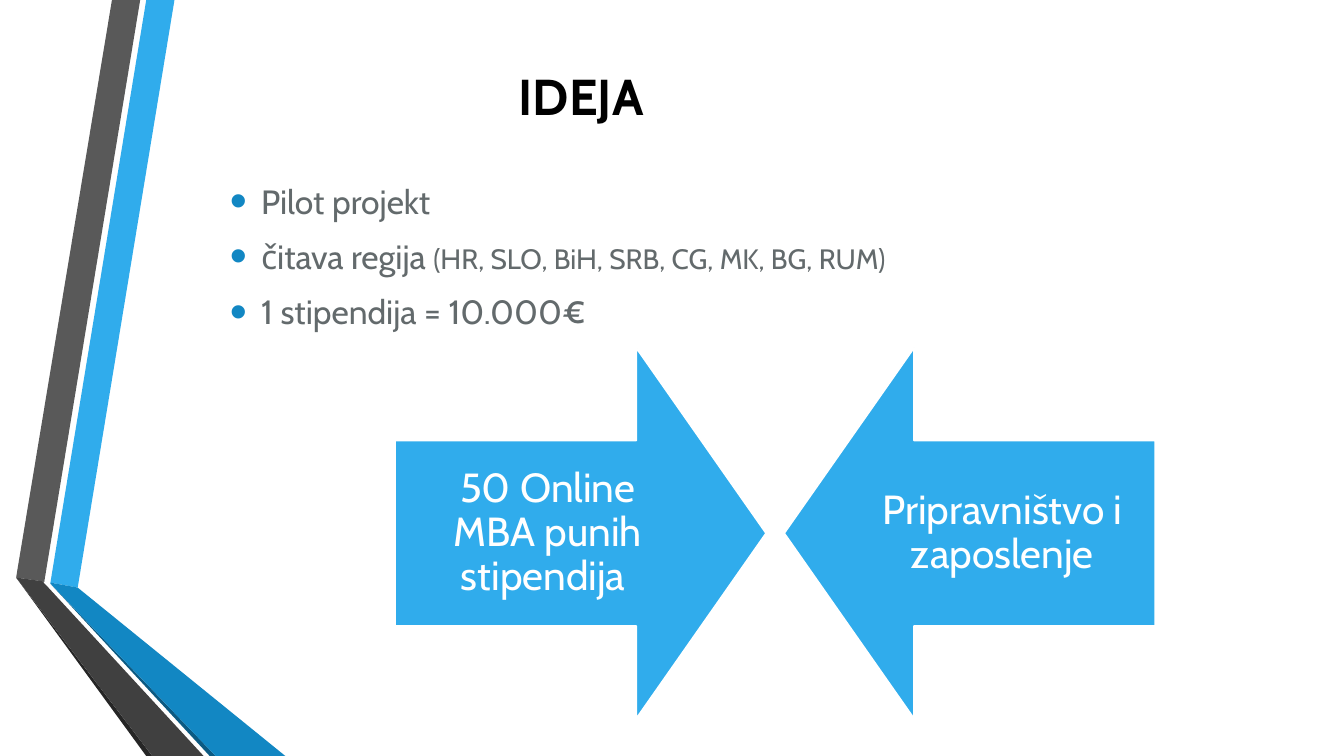
"""Builds the IDEJA slide: ribbons, a title, a list and two facing arrows."""
from dataclasses import dataclass

from lxml import etree
from pptx import Presentation
from pptx.dml.color import RGBColor
from pptx.enum.shapes import MSO_SHAPE
from pptx.enum.text import MSO_ANCHOR, MSO_AUTO_SIZE, PP_ALIGN
from pptx.oxml.ns import qn
from pptx.util import Inches, Pt

DOWN = MSO_SHAPE.DOWN_ARROW
MIDDLE = MSO_ANCHOR.MIDDLE
FIXED = MSO_AUTO_SIZE.NONE
LEFT, CENTER = PP_ALIGN.LEFT, PP_ALIGN.CENTER
WIDE, HIGH = Inches(13.33), Inches(7.5)


@dataclass(frozen=True)
class Theme:
    font: str = "Cabin"
    head: int = 36
    label: int = 29
    body: int = 24
    small: int = 20
    black: str = "000000"
    white: str = "FFFFFF"
    text: str = "636A6C"
    sky: str = "30ACEC"
    blue: str = "1287C3"
    navy: str = "0C5A82"
    gray: str = "595959"
    slate: str = "404040"
    coal: str = "262626"


THEME = Theme()

RIBBONS = (
    (THEME.sky, ((3.75, 77.07), (5.78, 77.73), (12.98, 0), (10.88, 0))),
    (THEME.gray, ((10.43, 0), (8.33, 0), (1.2, 76.4), (3.3, 76.93))),
    (THEME.coal, ((1.2, 76.4), (10.88, 100), (11.33, 100))),
    (THEME.navy, ((3.75, 77.2), (15.6, 100), (16.05, 100))),
    (THEME.blue, ((3.75, 77.2), (16.05, 100), (21.23, 100),
                  (5.78, 77.73), (3.75, 77.07))),
    (THEME.slate, ((15.15, 100), (3.6, 77.73), (3.23, 77.07),
                   (3.3, 76.93), (1.2, 76.4), (11.33, 100))),
)

ITEMS = (
    (("Pilot projekt", THEME.body),),
    (("čitava regija ", THEME.body),
     ("(HR, SLO, BiH, SRB, CG, MK, BG, RUM)", THEME.small)),
    (("1 stipendija = 10.000€", THEME.body),),
)


def across(share):
    return round(WIDE * share / 100)


def down(share):
    return round(HIGH * share / 100)


def area(left, top, width, height):
    return across(left), down(top), across(width), down(height)


def place(shape, *shares):
    shape.left, shape.top, shape.width, shape.height = area(*shares)


def tint(shape, color):
    shape.shadow.inherit = False
    shape.fill.solid()
    shape.fill.fore_color.rgb = RGBColor.from_string(color)


def bullet(para):
    props = para._p.get_or_add_pPr()
    props.set("marL", str(Inches(0.31)))
    props.set("indent", str(-Inches(0.31)))
    shade = etree.SubElement(props, qn("a:buClr"))
    etree.SubElement(shade, qn("a:srgbClr"), val=THEME.blue)
    etree.SubElement(props, qn("a:buSzPct"), val="145000")
    etree.SubElement(props, qn("a:buFont"), typeface="Arial")
    etree.SubElement(props, qn("a:buChar"), char="•")


def write(frame, lines, color, align=CENTER, bold=False, dots=False,
          space=None, after=None):
    frame.word_wrap = True
    frame.auto_size = FIXED
    frame.vertical_anchor = MIDDLE
    for index, line in enumerate(lines):
        para = frame.add_paragraph() if index else frame.paragraphs[0]
        para.alignment = align
        para.line_spacing = space
        para.space_after = after
        if dots:
            bullet(para)
        for text, size in line:
            run = para.add_run()
            run.text = text
            font = run.font
            font.name, font.size, font.bold = THEME.font, Pt(size), bold
            font.color.rgb = RGBColor.from_string(color)


def ribbon(slide, color, points):
    first, *rest = [(across(x), down(y)) for x, y in points]
    pen = slide.shapes.build_freeform(*first)
    pen.add_line_segments(rest, close=True)
    shape = pen.convert_to_shape()
    tint(shape, color)
    shape.line.fill.background()


def arrow(slide, left, turn, inset, text):
    shape = slide.shapes.add_shape(DOWN, *area(left, 46, 27.6, 49.07))
    shape.rotation = turn
    shape.adjustments[0], shape.adjustments[1] = 0.5, 0.35
    tint(shape, THEME.sky)
    shape.line.color.rgb = RGBColor.from_string(THEME.white)
    shape.line.width = Pt(1.25)
    label = slide.shapes.add_textbox(*area(left + inset, 58.27, 22.73, 24.53))
    frame = label.text_frame
    frame.margin_left = frame.margin_right = across(1.73)
    frame.margin_top = frame.margin_bottom = across(1.73)
    write(frame, [[(text, THEME.label)]], THEME.white, space=0.9)


def main():
    deck = Presentation()
    deck.slide_width, deck.slide_height = WIDE, HIGH
    slide = deck.slides.add_slide(deck.slide_layouts[1])
    for color, points in RIBBONS:
        ribbon(slide, color, points)

    title, body = slide.placeholders
    place(title, 24.6, 4.93, 37.28, 15.47)
    write(title.text_frame, [[("IDEJA", THEME.head)]], THEME.black, bold=True)
    place(body, 16.35, 17.2, 64.5, 46.4)
    body.text_frame.margin_bottom = down(13.73)
    write(body.text_frame, ITEMS, THEME.text, align=LEFT, dots=True,
          after=Pt(6))

    arrow(slide, 29.4, 270, 0, "50 Online MBA punih stipendija ")
    arrow(slide, 58.35, 90, 4.87, "Pripravništvo i zaposlenje")
    deck.save("out.pptx")


if __name__ == "__main__":
    main()
